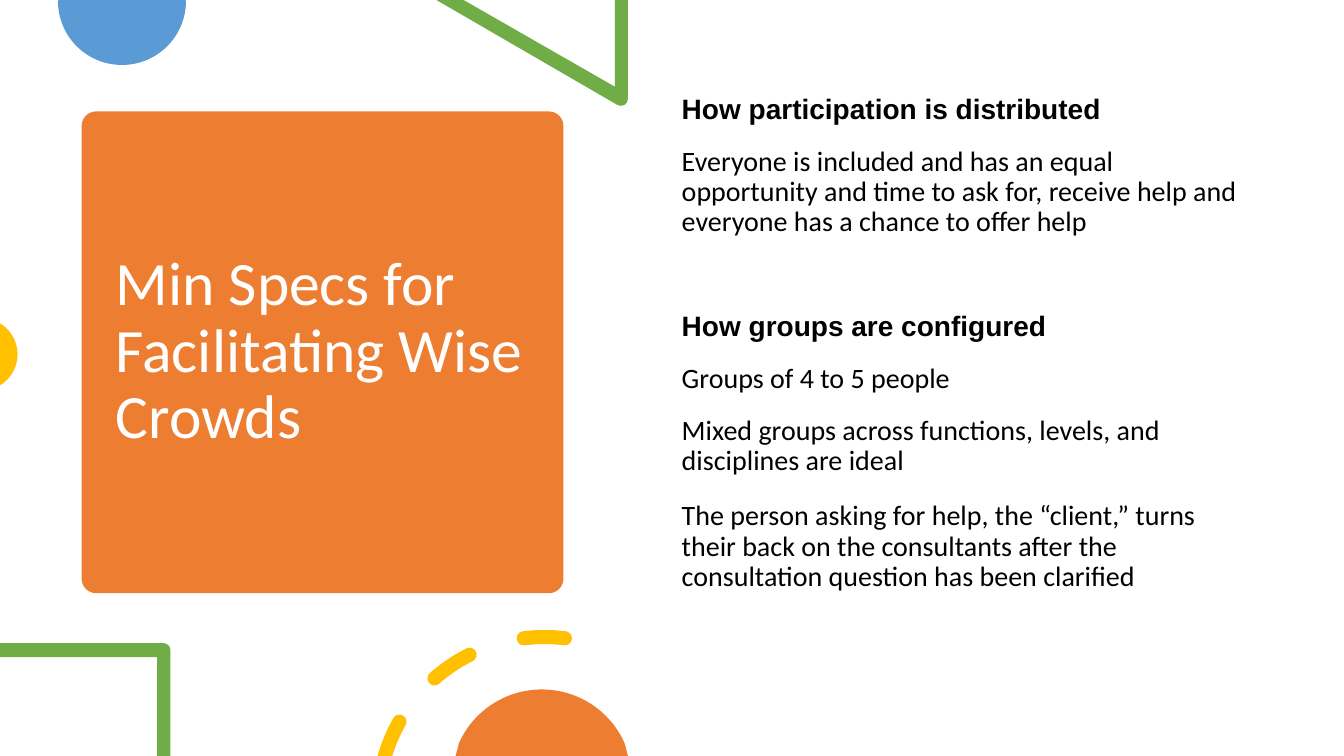
import math

import pptx
import pptx.dml.color
import pptx.enum.shapes
import pptx.enum.text
import pptx.oxml.ns
import pptx.util

# The grid is made of square cells, 75 rows to the height of the slide
HEIGHT = pptx.util.Inches(7.5)
WIDTH = HEIGHT * 16 // 9
ROWS = 75
CELL = HEIGHT / ROWS

COLORS = {
    "orange": "ED7D31",
    "blue": "5B9BD5",
    "green": "70AD47",
    "yellow": "FFC000",
    "white": "FFFFFF",
    "black": "000000",
}

TITLE = "Min Specs for Facilitating Wise Crowds"

# Text, is heading, space before, space after (points)
BODY = [
    ("How participation is distributed", True, 7.5, 8),
    ("Everyone is included and has an equal opportunity and time to ask for, "
     "receive help and everyone has a chance to offer help", False, 7.5, 8),
    ("How groups are configured", True, 45, 8),
    ("Groups of 4 to 5 people", False, 7.5, 8),
    ("Mixed groups across functions, levels, and disciplines are ideal", False, 7.5, 8),
    ("The person asking for help, the “client,” turns their back on the consultants "
     "after the consultation question has been clarified", False, 10, 0),
]


def cells(*values):
    return [round(v * CELL) for v in values]


def rgb(name):
    return pptx.dml.color.RGBColor.from_string(COLORS[name])


def paint(s, color):
    s.shadow.inherit = False
    s.fill.solid()
    s.fill.fore_color.rgb = rgb(color)
    s.line.fill.background()


def on_circle(cx, cy, r, angle):
    a = math.radians(angle)
    return cx + r * math.cos(a), cy - r * math.sin(a)


def arc(cx, cy, r, start, end):
    """Steps along a circle, degrees anticlockwise: one point, then Bezier curves."""
    count = math.ceil(abs(end - start) / 90)
    turn = (end - start) / count
    pull = r * 4 / 3 * math.tan(math.radians(turn) / 4)
    steps = [[on_circle(cx, cy, r, start)]]
    for i in range(count):
        a, b = start + turn * i, start + turn * (i + 1)
        p, q = on_circle(cx, cy, r, a), on_circle(cx, cy, r, b)
        steps.append([on_circle(*p, pull, a + 90), on_circle(*q, pull, b - 90), q])
    return steps


def corners(*points):
    return [[pt] for pt in points]


def dash(cx, cy, r, thick, start, end, cut=False):
    """Outline of a curved dash with round ends; a cut dash stops at the slide's edge."""
    half = thick / 2
    outer, inner = r + half, r - half
    cap = arc(*on_circle(cx, cy, r, start), half, start - 180, start)
    if cut:
        ends = [math.degrees(math.pi - math.asin((cy - ROWS) / q)) for q in (outer, inner)]
        return cap + arc(cx, cy, outer, start, ends[0]) + arc(cx, cy, inner, ends[1], start)
    return (cap + arc(cx, cy, outer, start, end)
            + arc(*on_circle(cx, cy, r, end), half, end, end + 180)
            + arc(cx, cy, inner, end, start))


def bend(s, sizes):
    """Join each run of three line steps that stands for a curve into one curve."""
    lines = iter(list(s._element.iter(pptx.oxml.ns.qn("a:lnTo"))))
    for size in sizes:
        first = next(lines)
        if size == 3:
            first.tag = pptx.oxml.ns.qn("a:cubicBezTo")
            for line in (next(lines), next(lines)):
                first.append(line[0])
                line.getparent().remove(line)


def add_outline(slide, color, *contours):
    builder, sizes = None, []
    for contour in contours:
        pen = cells(*contour[0][0])
        if builder is None:
            builder = slide.shapes.build_freeform(*pen, scale=1.0)
        else:
            builder.move_to(*pen)
        points = []
        for step in contour[1:]:
            step = [cells(*pt) for pt in step]
            if len(step) == 1 and math.dist(step[0], pen) < CELL / 100:
                continue
            points += step
            sizes.append(len(step))
            pen = step[-1]
        builder.add_line_segments(points, close=True)
    s = builder.convert_to_shape()
    bend(s, sizes)
    paint(s, color)


def add_text_box(slide, box, anchor):
    tf = slide.shapes.add_textbox(*cells(*box)).text_frame
    tf.word_wrap = True
    tf.vertical_anchor = anchor
    return tf


def set_paragraph(p, text, font, size, color, bold=False):
    p.text = text
    p.line_spacing = 0.9
    f = p.runs[0].font
    f.name, f.size, f.bold = font, pptx.util.Pt(size), bold
    f.color.rgb = rgb(color)


def add_title(slide):
    s = slide.shapes.add_shape(
        pptx.enum.shapes.MSO_SHAPE.ROUNDED_RECTANGLE, *cells(8.1, 11.05, 47.8, 47.8))
    s.adjustments[0] = 0.03
    paint(s, "orange")
    tf = add_text_box(slide, (10.5, 12.15, 43.1, 45.6), pptx.enum.text.MSO_ANCHOR.MIDDLE)
    set_paragraph(tf.paragraphs[0], TITLE, "Calibri", 44, "white")


def add_body(slide):
    tf = add_text_box(slide, (66.65, 8.96, 57.5, 53.5), pptx.enum.text.MSO_ANCHOR.TOP)
    for i, (text, heading, before, after) in enumerate(BODY):
        p = tf.add_paragraph() if i else tf.paragraphs[0]
        set_paragraph(p, text, "Arial" if heading else "Calibri", 20, "black", heading)
        p.space_before = pptx.util.Pt(before)
        p.space_after = pptx.util.Pt(after)


def add_decoration(slide):
    # Circles cut by the top and left edges
    add_outline(slide, "blue", corners((18.4, 0)) + arc(12.1, 0.1, 6.35, 0, -180)
                + corners((5.8, 0)))
    add_outline(slide, "yellow", arc(-1.85, 35.15, 3.59, 58.6, -58.6))

    # Corner of a triangle at the top, corner of a square at the bottom
    add_outline(slide, "green", corners((43.3, 0), (46, 0), (61, 8.6), (61, 0), (62.3, 0))
                + arc(61.6, 9.8, 0.7, 0, -120))
    add_outline(slide, "green", corners((0, 65.2), (0, 63.8)) + arc(16.2, 64.5, 0.7, 90, 0)
                + corners((16.9, ROWS), (15.6, ROWS), (15.6, 65.2)))

    # Dashed ring around the circle at the bottom
    ring = (54, 79.7, 16.5, 1.4)
    add_outline(slide, "yellow", dash(*ring, 150.6, 164, cut=True),
                dash(*ring, 116.7, 131.3), dash(*ring, 82.9, 97.1))
    add_outline(slide, "orange", arc(53.75, 77.4, 9, 24.3, 155.7)
                + corners((45.2, ROWS), (62.3, ROWS)))


def main():
    prs = pptx.Presentation()
    prs.slide_width, prs.slide_height = WIDTH, HEIGHT
    slide = prs.slides.add_slide(prs.slide_layouts[6])
    add_title(slide)
    add_decoration(slide)
    add_body(slide)
    prs.save("out.pptx")


if __name__ == "__main__":
    main()
